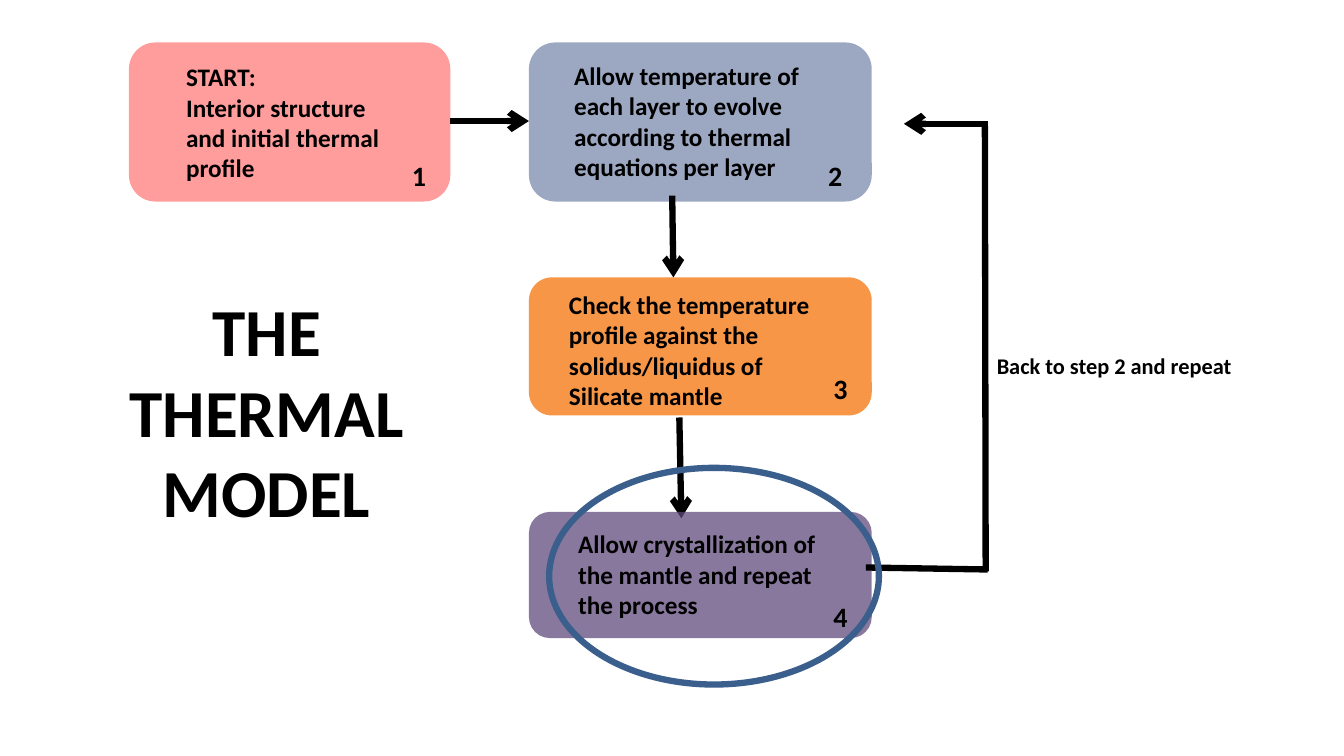
from dataclasses import dataclass

from lxml import etree
from pptx import Presentation
from pptx.dml.color import RGBColor
from pptx.enum.shapes import MSO_CONNECTOR, MSO_SHAPE
from pptx.enum.text import MSO_ANCHOR, PP_ALIGN
from pptx.oxml.ns import qn
from pptx.util import Cm, Pt

STRAIGHT = MSO_CONNECTOR.STRAIGHT
ROUNDED = MSO_SHAPE.ROUNDED_RECTANGLE
OVAL = MSO_SHAPE.OVAL
MIDDLE = MSO_ANCHOR.MIDDLE
LEFT, CENTER = PP_ALIGN.LEFT, PP_ALIGN.CENTER


@dataclass(frozen=True)
class Theme:
    font: str = "Calibri"
    ink: str = "000000"
    start: str = "FF0000"
    evolve: str = "002060"
    check: str = "F79646"
    crystallize: str = "604A7B"
    highlight: str = "3A5F8C"
    title_size: int = 48
    number_size: int = 20
    body_size: int = 18
    label_size: int = 16
    stroke: float = 4.5


@dataclass(frozen=True)
class Box:
    left: float
    top: float
    width: float
    height: float

    def inner(self, left, top, width, height):
        return Box(self.left + left, self.top + top, width, height)

    def lengths(self):
        return [Cm(value) for value in (self.left, self.top, self.width, self.height)]


@dataclass(frozen=True)
class Step:
    box: Box
    color: str
    opacity: int
    text: str
    text_inset: tuple
    text_width: float
    number_inset: tuple


THEME = Theme()
START_BOX = Box(3.25, 1.07, 8.1, 4.01)
EVOLVE_BOX = Box(13.33, 1.07, 8.64, 4.01)
CHECK_BOX = Box(13.33, 6.99, 8.64, 3.48)
CRYSTALLIZE_BOX = Box(13.33, 12.9, 8.64, 3.18)
STEPS = [
    Step(START_BOX, THEME.start, 39,
         "START:\nInterior structure and initial thermal profile",
         (1.19, 0.36), 5.38, (6.88, 2.79)),
    Step(EVOLVE_BOX, THEME.evolve, 39,
         "Allow temperature of each layer to evolve according to thermal equations per layer",
         (0.89, 0.33), 6.91, (7.29, 2.79)),
    Step(CHECK_BOX, THEME.check, 100,
         "Check the temperature profile against the solidus/liquidus of Silicate mantle",
         (0.76, 0.18), 7.37, (7.42, 2.24)),
    Step(CRYSTALLIZE_BOX, THEME.crystallize, 74,
         "Allow crystallization of the mantle and repeat the process",
         (0.99, 0.3), 6.91, (7.42, 2.08)),
]


def write(frame, text, size, align=LEFT):
    frame.word_wrap = True
    para = frame.paragraphs[0]
    para.text = text
    para.alignment = align
    for span in para.runs:
        span.font.name = THEME.font
        span.font.size = Pt(size)
        span.font.bold = True
        span.font.color.rgb = RGBColor.from_string(THEME.ink)


def add_text(page, box, text, size):
    write(page.shapes.add_textbox(*box.lengths()).text_frame, text, size)


def add_stroke(page, start, end, arrow=True):
    stroke = page.shapes.add_connector(STRAIGHT, *(Cm(value) for value in start + end))
    stroke.line.color.rgb = RGBColor.from_string(THEME.ink)
    stroke.line.width = Pt(THEME.stroke)
    if arrow:
        etree.SubElement(stroke.line._get_or_add_ln(), qn("a:tailEnd"), type="arrow")
    etree.SubElement(stroke._element.spPr, qn("a:effectLst"))


def add_title(page, box):
    title = page.shapes.title
    title.left, title.top, title.width, title.height = box.lengths()
    write(title.text_frame, "THE THERMAL MODEL", THEME.title_size, CENTER)
    title.text_frame.vertical_anchor = MIDDLE


def add_step(page, number, step):
    card = page.shapes.add_shape(ROUNDED, *step.box.lengths())
    card.shadow.inherit = False
    card.line.fill.background()
    card.fill.solid()
    card.fill.fore_color.rgb = RGBColor.from_string(step.color)
    if step.opacity < 100:
        color = card._element.spPr.find(qn("a:solidFill"))[0]
        etree.SubElement(color, qn("a:alpha"), val=str(step.opacity * 1000))
    text_box = step.box.inner(*step.text_inset, step.text_width, 3.33)
    add_text(page, text_box, step.text, THEME.body_size)
    number_box = step.box.inner(*step.number_inset, 0.94, 1.12)
    add_text(page, number_box, str(number), THEME.number_size)


def add_flow(page, box):
    for number, step in enumerate(STEPS[:3], 1):
        add_step(page, number, step)
    right = START_BOX.left + START_BOX.width
    add_stroke(page, (right, 3.05), (box.left, 3.05))
    add_stroke(page, (box.left + 3.61, 4.93), (box.left + 3.64, CHECK_BOX.top))
    add_stroke(page, (box.left + 3.79, 10.52), (box.left + 3.84, 13.06))
    add_step(page, 4, STEPS[3])


def add_loop(page, box):
    right, bottom = box.left + box.width, box.top + box.height
    add_stroke(page, (right, box.top), (box.left + 0.96, box.top))
    add_stroke(page, (right - 0.07, box.top + 0.06), (right - 0.05, bottom + 0.05), False)
    add_stroke(page, (right, bottom), (box.left, bottom - 0.05), False)
    label_box = box.inner(box.width - 0.02, 5.62, 6.78, 0.94)
    add_text(page, label_box, "Back to step 2 and repeat", THEME.label_size)


def add_highlight(page, box):
    ring = page.shapes.add_shape(OVAL, *box.lengths())
    ring.shadow.inherit = False
    ring.fill.background()
    ring.line.color.rgb = RGBColor.from_string(THEME.highlight)
    ring.line.width = Pt(THEME.stroke)


def main():
    deck = Presentation()
    deck.slide_width, deck.slide_height = Cm(33.87), Cm(19.05)
    page = deck.slides.add_slide(deck.slide_layouts.get_by_name("Title Only"))
    add_title(page, Box(1.73, 7.16, 9.98, 6.35))
    add_flow(page, EVOLVE_BOX)
    add_loop(page, Box(21.82, 3.12, 3.07, 11.23))
    add_highlight(page, CRYSTALLIZE_BOX.inner(0.51, -1.11, 8.31, 5.46))
    deck.save("out.pptx")


if __name__ == "__main__":
    main()
